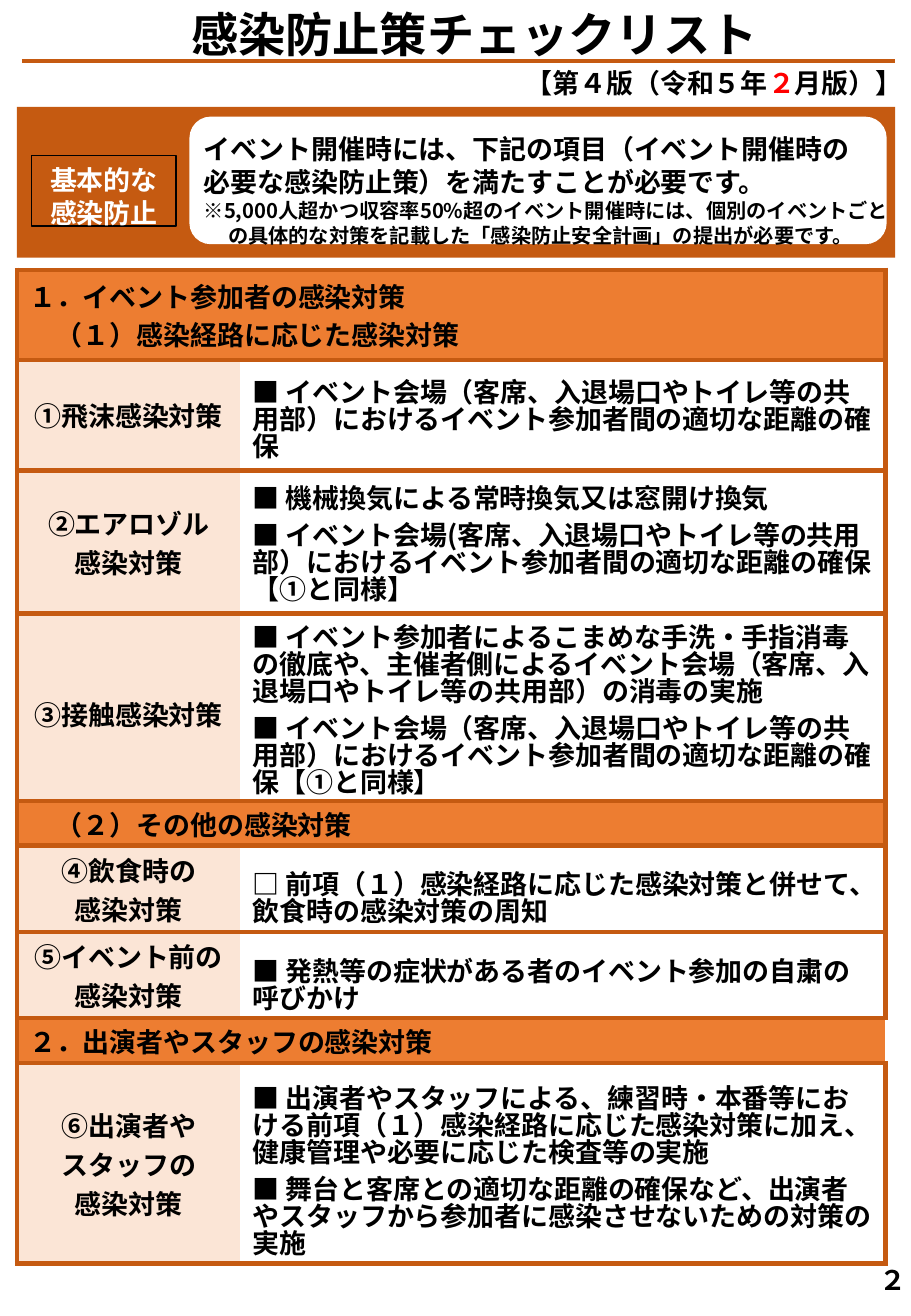
from lxml import etree
from pptx import Presentation
from pptx import util as u
from pptx.dml.color import RGBColor
from pptx.enum import shapes, text
from pptx.oxml import ns

COLORS = {"black": "000000", "white": "FFFFFF", "red": "FF0000",
          "brown": "C55A11", "orange": "ED7D31", "peach": "FBE5D6"}
FONT = "Noto Sans CJK JP"
PX = 9144
NO_STYLE = "{2D5ABB26-0587-4C30-8999-92F81FD0307C}"
CENTER = text.PP_ALIGN.CENTER
MIDDLE = text.MSO_ANCHOR.MIDDLE
BOTTOM = text.MSO_ANCHOR.BOTTOM
DISTANCE = "イベント参加者間の適切な距離の確保"
VENUE = "イベント会場（客席、入退場口やトイレ等の共用部）"


class Checklist:
    """Draws the checklist's elements on one page in one style."""

    def __init__(self, width, height):
        self.deck = Presentation()
        self.deck.slide_width, self.deck.slide_height = width * PX, height * PX
        self.page = self.deck.slides.add_slide(self.deck.slide_layouts[6])

    def color(self, name):
        return RGBColor.from_string(COLORS[name])

    def style(self, span, size=16, color="black"):
        font = span.font
        font.size, font.bold, font.name = u.Pt(size), True, FONT
        font.color.rgb = self.color(color)
        etree.SubElement(span._r.get_or_add_rPr(), ns.qn("a:ea"), typeface=FONT)

    def indent(self, para, left, first=0):
        props = para._p.get_or_add_pPr()
        props.set("marL", str(left * PX))
        props.set("indent", str(first * PX))

    def fill_text(self, frame, lines, size=16, color="black", align=None, spacing=None, after=None):
        frame.text = "\n".join(lines)
        for para in frame.paragraphs:
            para.alignment = align
            if spacing:
                para.line_spacing = u.Pt(spacing)
            if after:
                para.space_after = u.Pt(after)
            for span in para.runs:
                self.style(span, size, color)

    def frame(self, box, inset):
        frame = box.text_frame
        frame.word_wrap = True
        frame.margin_left = frame.margin_right = inset * PX
        frame.margin_top = frame.margin_bottom = inset * PX // 2
        return frame

    def text_box(self, left, top, width, height, lines, inset=0, **style):
        box = self.page.shapes.add_textbox(left * PX, top * PX, width * PX, height * PX)
        frame = self.frame(box, inset)
        self.fill_text(frame, lines, **style)
        return frame

    def shape(self, kind, left, top, width, height, fill=None, line=None):
        box = self.page.shapes.add_shape(kind, left * PX, top * PX, width * PX, height * PX)
        box.shadow.inherit = False
        if fill:
            box.fill.solid()
            box.fill.fore_color.rgb = self.color(fill)
        else:
            box.fill.background()
        if line:
            box.line.color.rgb = self.color(line)
            box.line.width = u.Pt(1)
        else:
            box.line.fill.background()
        return box

    def rule(self, left, right, y):
        line = self.page.shapes.add_connector(
            shapes.MSO_CONNECTOR.STRAIGHT, left * PX, y * PX, right * PX, y * PX)
        line.line.color.rgb = self.color("brown")
        line.line.width = u.Pt(2.25)
        etree.SubElement(line._element.spPr, ns.qn("a:effectLst"))

    def cell(self, cell, fill, sides, anchor=MIDDLE):
        props = cell._tc.get_or_add_tcPr()
        for side in sides:
            line = etree.SubElement(props, ns.qn("a:ln" + side), w=str(u.Pt(3)))
            solid = etree.SubElement(line, ns.qn("a:solidFill"))
            etree.SubElement(solid, ns.qn("a:srgbClr"), val=COLORS["brown"])
        cell.fill.solid()
        cell.fill.fore_color.rgb = self.color(fill)
        cell.vertical_anchor = anchor

    def table(self, top, heights, rows, margin):
        frame = self.page.shapes.add_table(
            len(rows), 2, 14 * PX, top * PX, 715 * PX, sum(heights) * PX)
        table = frame.table
        table.first_row = table.horz_banding = False
        table._tbl.tblPr.find(ns.qn("a:tableStyleId")).text = NO_STYLE
        for column, width in zip(table.columns, (184, 531)):
            column.width = width * PX
        for index, (height, (heads, items, option)) in enumerate(zip(heights, rows)):
            table.rows[index].height = height * PX
            label, detail = table.cell(index, 0), table.cell(index, 1)
            for cell in (label, detail):
                cell.margin_top = cell.margin_bottom = margin * PX
            if items:
                self.fill_text(label.text_frame, heads, align=CENTER)
                self.fill_text(detail.text_frame, items, spacing=16, after=6)
                self.cell(label, "peach", "LTB")
                self.cell(detail, "white", "RTB", option)
            else:
                self.fill_text(label.text_frame, heads)
                for para in label.text_frame.paragraphs:
                    if para.text.startswith("（"):
                        self.indent(para, 22)
                sides = "TB" if option == "open" else "RTB"
                self.cell(label, "orange", "L" + sides)
                self.cell(detail, "orange", sides)
                label.merge(detail)


def main():
    sheet = Checklist(750, 1083)
    rect = shapes.MSO_SHAPE.RECTANGLE

    sheet.table(222, (74, 91, 118, 165), [
        (["１．イベント参加者の感染対策", "（１）感染経路に応じた感染対策"], None, None),
        (["①飛沫感染対策"], [f"■ {VENUE}における{DISTANCE}"], BOTTOM),
        (["②エアロゾル", "感染対策"],
         ["■ 機械換気による常時換気又は窓開け換気",
          f"■ イベント会場(客席、入退場口やトイレ等の共用部）における{DISTANCE}【①と同様】"], BOTTOM),
        (["③接触感染対策"],
         [f"■ イベント参加者によるこまめな手洗・手指消毒の徹底や、主催者側による{VENUE}の消毒の実施",
          f"■ {VENUE}における{DISTANCE}【①と同様】"], MIDDLE),
    ], 5)

    sheet.shape(rect, 14, 88, 723, 124, "brown")
    sheet.shape(shapes.MSO_SHAPE.ROUNDED_RECTANGLE, 156, 96, 574, 105, "white")
    badge = sheet.shape(rect, 26, 128, 119, 58, line="black")
    frame = sheet.frame(badge, 10)
    frame.margin_top = 6 * PX
    frame.vertical_anchor = text.MSO_ANCHOR.TOP
    sheet.fill_text(frame, ["基本的な", "感染防止"], color="white", align=CENTER, spacing=19.5)

    intro = sheet.text_box(158, 104, 584, 109, [
        "イベント開催時には、下記の項目（イベント開催時の",
        "必要な感染防止策）を満たすことが必要です。",
        "※5,000人超かつ収容率50%超のイベント開催時には、個別のイベントごとの具体的な対策を"
        "記載した「感染防止安全計画」の提出が必要です。"], inset=10, spacing=19.5)
    note = intro.paragraphs[2]
    sheet.indent(note, 20, -20)
    note.line_spacing = u.Pt(14.5)
    note.runs[0].font.size = u.Pt(12)

    sheet.text_box(31, 4, 719, 57, ["感染防止策チェックリスト"], size=28, align=CENTER)
    sheet.rule(18, 737, 50)

    edition = sheet.text_box(426, 55, 324, 33, ["【第４版（令和５年"], align=CENTER).paragraphs[0]
    for words, color in (("２", "red"), ("月版）】", "black")):
        span = edition.add_run()
        span.text = words
        sheet.style(span, color=color)

    sheet.table(659, (37, 71, 71, 37, 165), [
        (["（２）その他の感染対策"], None, None),
        (["④飲食時の", "感染対策"],
         ["□ 前項（１）感染経路に応じた感染対策と併せて、飲食時の感染対策の周知"], BOTTOM),
        (["⑤イベント前の感染対策"],
         ["■ 発熱等の症状がある者のイベント参加の自粛の呼びかけ"], BOTTOM),
        (["２．出演者やスタッフの感染対策"], None, "open"),
        (["⑥出演者や", "スタッフの", "感染対策"],
         ["■ 出演者やスタッフによる、練習時・本番等における前項（１）感染経路に応じた感染対策に加え、"
          "健康管理や必要に応じた検査等の実施",
          "■ 舞台と客席との適切な距離の確保など、出演者やスタッフから参加者に感染させないための"
          "対策の実施"], BOTTOM),
    ], 2)

    sheet.text_box(721, 1040, 28, 33, ["２"], align=CENTER)
    sheet.deck.save("out.pptx")


if __name__ == "__main__":
    main()
